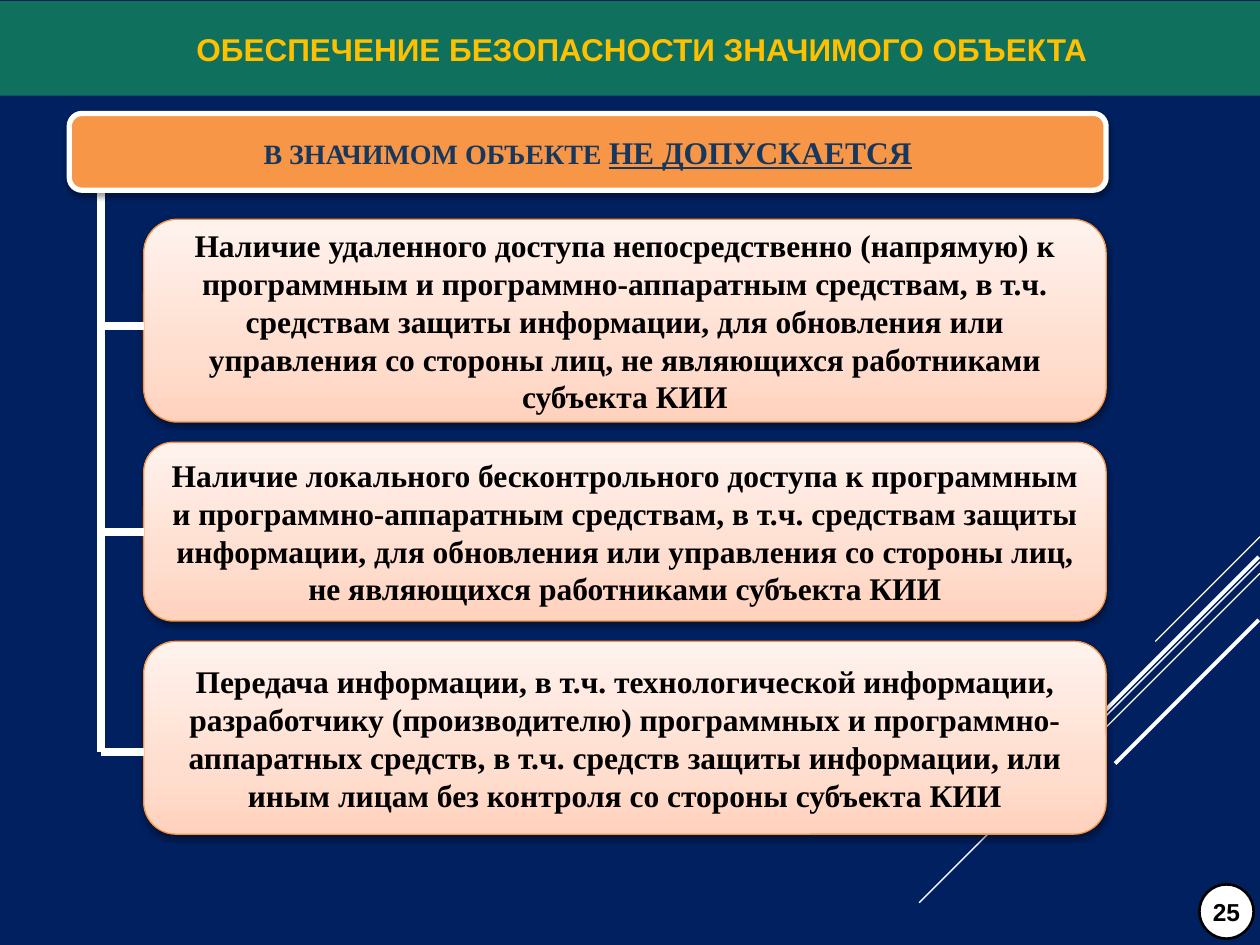
from copy import deepcopy
from dataclasses import dataclass

from lxml.etree import SubElement
from pptx import Presentation
from pptx.dml.color import RGBColor
from pptx.enum.shapes import MSO_CONNECTOR, MSO_SHAPE
from pptx.enum.text import MSO_ANCHOR, MSO_AUTO_SIZE, PP_ALIGN
from pptx.oxml.ns import qn
from pptx.util import Pt

TITLE = "ОБЕСПЕЧЕНИЕ БЕЗОПАСНОСТИ ЗНАЧИМОГО ОБЪЕКТА"
HEADER = ("В ЗНАЧИМОМ ОБЪЕКТЕ ", "НЕ ДОПУСКАЕТСЯ")
PAGE_NUMBER = "25"
PROHIBITIONS = [
    {"text": "Наличие удаленного доступа непосредственно (напрямую) к программным и "
             "программно-аппаратным средствам, в т.ч. средствам защиты информации, для "
             "обновления или управления со стороны лиц, не являющихся работниками "
             "субъекта КИИ",
     "top": 125.3, "height": 115.9, "branch": 186.5},
    {"text": "Наличие локального бесконтрольного доступа к программным и "
             "программно-аппаратным средствам, в т.ч. средствам защиты информации, для "
             "обновления или управления со стороны лиц, не являющихся работниками "
             "субъекта КИИ",
     "top": 252.7, "height": 102.2, "branch": 303.8},
    {"text": "Передача информации, в т.ч. технологической информации, разработчику "
             "(производителю) программных и программно-аппаратных средств, в т.ч. средств "
             "защиты информации, или иным лицам без контроля со стороны субъекта КИИ",
     "top": 366.5, "height": 110.2, "branch": 429.8},
]
DIAGONALS = [
    (720, 306.7, 59.8, 0.75),
    (720, 321.1, 194.8, 0.75),
    (720, 327.6, 123.8, 0.75),
    (719.3, 318.2, 113, 2.25),
    (719.3, 354.2, 82.1, 2.25),
]
TRUNK_X, TRUNK_TOP = 57.6, 109.4
CARD_LEFT, CARD_WIDTH = 82.1, 550


@dataclass(frozen=True)
class Theme:
    navy: str = "002060"
    green: str = "0F705D"
    gold: str = "FFC000"
    orange: str = "F79646"
    card_edge: str = "F69240"
    card_stops: tuple = ((0, "FFD2BD"), (0.35, "FFDED0"), (1, "FFF2ED"))
    header_ink: str = "17375E"
    white: str = "FFFFFF"
    black: str = "000000"
    sans: str = "Arial"
    serif: str = "Times New Roman"
    body: int = 18
    lead: int = 16
    number: int = 14
    tree_line: float = 4.5


THEME = Theme()


def rgb(value):
    return RGBColor.from_string(value)


def draw_line(slide, start, end, width):
    line = slide.shapes.add_connector(MSO_CONNECTOR.STRAIGHT, *map(Pt, (*start, *end)))
    line.line.color.rgb = rgb(THEME.white)
    line.line.width = Pt(width)
    SubElement(line._element.spPr, qn("a:effectLst"))
    return line


def draw_shape(slide, kind, box, fill, edge, edge_width):
    shape = slide.shapes.add_shape(kind, *map(Pt, box))
    if isinstance(fill, str):
        shape.fill.solid()
        shape.fill.fore_color.rgb = rgb(fill)
    else:
        fill_gradient(shape, fill)
    shape.line.color.rgb = rgb(edge)
    shape.line.width = Pt(edge_width)
    shape.shadow.inherit = False
    shape.text_frame.vertical_anchor = MSO_ANCHOR.MIDDLE
    return shape


def fill_gradient(shape, stops):
    shape.fill.gradient()
    shape.fill.gradient_angle = 90
    stop_list = shape._element.spPr.find(qn("a:gradFill")).find(qn("a:gsLst"))
    stop_list.append(deepcopy(stop_list[0]))
    for stop, (position, color) in zip(shape.fill.gradient_stops, stops):
        stop.position = position
        stop.color.rgb = rgb(color)


def add_shadow(shape):
    effects = shape._element.spPr.find(qn("a:effectLst"))
    shadow = SubElement(effects, qn("a:outerShdw"), blurRad="40000", dist="20000",
                        dir="5400000", rotWithShape="0")
    color = SubElement(shadow, qn("a:srgbClr"), val=THEME.black)
    SubElement(color, qn("a:alpha"), val="38000")


def style(paragraph, face, size, color):
    paragraph.alignment = PP_ALIGN.CENTER
    font = paragraph.font
    font.name, font.size, font.bold = face, Pt(size), True
    font.color.rgb = rgb(color)


def build_title(slide):
    title = slide.shapes.title
    title.left, title.top, title.width, title.height = map(Pt, (0, 0.7, 720, 54))
    title.fill.solid()
    title.fill.fore_color.rgb = rgb(THEME.green)
    frame = title.text_frame
    frame.text = TITLE
    frame.auto_size = MSO_AUTO_SIZE.NONE
    frame.vertical_anchor = MSO_ANCHOR.MIDDLE
    frame.margin_left = frame.margin_right = Pt(3.6)
    frame.paragraphs[0]._p.get_or_add_pPr().set("marL", str(Pt(13.7)))
    style(frame.paragraphs[0], THEME.sans, THEME.body, THEME.gold)


def build_header(slide):
    header = draw_shape(slide, MSO_SHAPE.ROUNDED_RECTANGLE, (39.6, 64.8, 592.5, 43.9),
                        THEME.orange, THEME.white, 3)
    add_shadow(header)
    paragraph = header.text_frame.paragraphs[0]
    style(paragraph, THEME.serif, THEME.lead, THEME.header_ink)
    lead, emphasis = HEADER
    paragraph.add_run().text = lead
    ban = paragraph.add_run()
    ban.text = emphasis
    ban.font.size = Pt(THEME.body)
    ban.font.underline = True


def build_prohibition(slide, item):
    box = (CARD_LEFT, item["top"], CARD_WIDTH, item["height"])
    card = draw_shape(slide, MSO_SHAPE.ROUNDED_RECTANGLE, box,
                      THEME.card_stops, THEME.card_edge, 0.75)
    add_shadow(card)
    card.text_frame.text = item["text"]
    style(card.text_frame.paragraphs[0], THEME.serif, THEME.body, THEME.black)
    branch = draw_line(slide, (TRUNK_X, item["branch"]), (CARD_LEFT, item["branch"]),
                       THEME.tree_line)
    if abs(item["top"] + item["height"] / 2 - item["branch"]) < 0.5:
        branch.end_connect(card, 1)


def build_page_number(slide):
    badge = draw_shape(slide, MSO_SHAPE.STAR_16_POINT, (685.4, 505.4, 31, 31),
                       THEME.white, THEME.black, 1.5)
    badge.adjustments[0] = 0.5
    badge.text_frame.word_wrap = False
    badge.text_frame.text = PAGE_NUMBER
    style(badge.text_frame.paragraphs[0], THEME.sans, THEME.number, THEME.black)


def main():
    deck = Presentation()
    deck.slide_width, deck.slide_height = Pt(720), Pt(540)
    slide = deck.slides.add_slide(deck.slide_layouts[5])
    slide.background.fill.solid()
    slide.background.fill.fore_color.rgb = rgb(THEME.navy)
    for right, top, span, width in DIAGONALS:
        draw_line(slide, (right, top), (right - span, top + span), width)
    draw_line(slide, (TRUNK_X, TRUNK_TOP), (TRUNK_X, PROHIBITIONS[-1]["branch"]),
              THEME.tree_line)
    build_title(slide)
    build_header(slide)
    for item in PROHIBITIONS:
        build_prohibition(slide, item)
    build_page_number(slide)
    deck.save("out.pptx")


if __name__ == "__main__":
    main()
